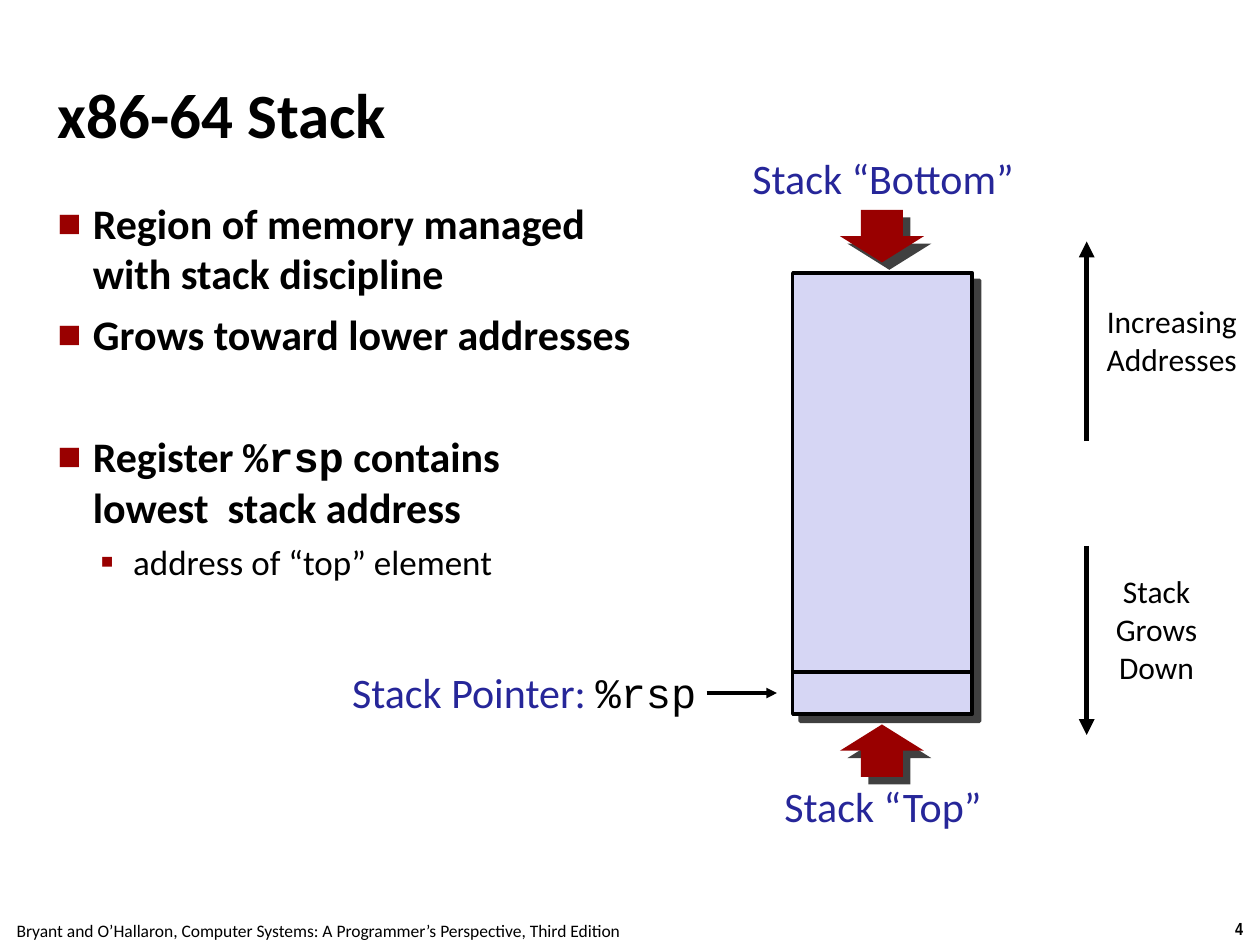
"""Builds the x86-64 stack slide on a grid of 120 columns by 90 rows."""
from lxml.etree import SubElement
from pptx import Presentation
from pptx.dml.color import RGBColor
from pptx.enum.shapes import MSO_CONNECTOR as Conn, MSO_SHAPE as Shape
from pptx.enum.text import MSO_ANCHOR as Anchor, MSO_AUTO_SIZE as Auto, PP_ALIGN as Align
from pptx.oxml.ns import qn
from pptx.util import Inches, Pt

BLACK, BLUE, RED, LILAC = "000000", "262699", "990000", "D6D6F4"
SANS, MONO = "Calibri", "Courier New"


def rgb(value):
    return RGBColor.from_string(value)


def sub(parent, tag, **attrs):
    return SubElement(parent, qn(tag), {k: str(v) for k, v in attrs.items()})


class StackSlide:
    cols, rows = 120, 90

    def __init__(self, prs):
        self.prs = prs
        self.slide = prs.slides.add_slide(prs.slide_layouts[1])
        self.shapes = self.slide.shapes

    def x(self, col):
        return round(self.prs.slide_width * col / self.cols)

    def y(self, row):
        return round(self.prs.slide_height * row / self.rows)

    def box(self, col, row, width, height):
        return self.x(col), self.y(row), self.x(width), self.y(height)

    def frame(self, sp, wrap=True, anchor=Anchor.TOP, inset=0.04):
        tf = sp.text_frame
        tf.auto_size, tf.word_wrap, tf.vertical_anchor = Auto.NONE, wrap, anchor
        tf.margin_left = tf.margin_right = tf.margin_top = tf.margin_bottom = Inches(inset)
        return tf

    def font(self, font, size=None, color=None, name=None, bold=None):
        if size:
            font.size = Pt(size)
        if color:
            font.color.rgb = rgb(color)
        if name:
            font.name = name
        if bold is not None:
            font.bold = bold

    def fill_text(self, p, parts, size, color=BLACK, name=SANS, bold=False):
        self.font(p.font, size, color, name, bold)
        for part in [parts] if isinstance(parts, str) else parts:
            text, style = (part, {}) if isinstance(part, str) else part
            for i, line in enumerate(text.split("\n")):
                if i:
                    p.add_line_break()
                r = p.add_run()
                r.text = line
                self.font(r.font, **style)

    def place(self, sp, cells):
        sp.left, sp.top, sp.width, sp.height = self.box(*cells)

    def title(self, text, cells):
        sp = self.shapes.title
        self.place(sp, cells)
        p = self.frame(sp, anchor=Anchor.MIDDLE).paragraphs[0]
        p.alignment = Align.LEFT
        self.fill_text(p, text, 36, bold=True)

    def bullets(self, items, cells):
        sp = self.slide.placeholders[1]
        self.place(sp, cells)
        tf = self.frame(sp)
        for i, (level, before, parts) in enumerate(items):
            p = tf.add_paragraph() if i else tf.paragraphs[0]
            p.level, p.space_before = level, Pt(before)
            left, hang, char, scale, size = [(0.28, 0.28, "■", 60, 24),
                                             (0.6, 0.26, "▪", 110, 20)][level]
            pPr = p._p.get_or_add_pPr()
            pPr.set("marL", str(Inches(left)))
            pPr.set("indent", str(-Inches(hang)))
            sub(sub(pPr, "a:buClr"), "a:srgbClr", val=RED)
            sub(pPr, "a:buSzPct", val=scale * 1000)
            sub(pPr, "a:buFont", typeface=SANS)
            sub(pPr, "a:buChar", char=char)
            self.fill_text(p, parts, size, bold=level == 0)

    def label(self, lines, cells, align=Align.CENTER, wrap=False, inset=0.04, **style):
        tf = self.frame(self.shapes.add_textbox(*self.box(*cells)), wrap, inset=inset)
        for i, parts in enumerate(lines):
            p = tf.add_paragraph() if i else tf.paragraphs[0]
            p.alignment = align
            self.fill_text(p, parts, **style)

    def block(self, kind, cells, fill, line=None):
        sp = self.shapes.add_shape(kind, *self.box(*cells))
        sp.fill.solid()
        sp.fill.fore_color.rgb = rgb(fill)
        if line:
            sp.line.color.rgb, sp.line.width = rgb(BLACK), Pt(line)
        else:
            sp.line.fill.background()
        sp.shadow.inherit = False
        shadow = sub(sp._element.spPr.find(qn("a:effectLst")), "a:outerShdw",
                     blurRad=0, dist=Pt(6), dir=45 * 60000, algn="ctr", rotWithShape=0)
        sub(sub(shadow, "a:srgbClr", val=BLACK), "a:alpha", val=75000)

    def line(self, start, end, width, arrow=True):
        (x1, y1), (x2, y2) = start, end
        sp = self.shapes.add_connector(Conn.STRAIGHT, self.x(x1), self.y(y1),
                                       self.x(x2), self.y(y2))
        sp.line.color.rgb, sp.line.width = rgb(BLACK), Pt(width)
        if arrow:
            sub(sp._element.spPr.find(qn("a:ln")), "a:tailEnd", type="triangle")
        sub(sp._element.spPr, "a:effectLst")


def main():
    prs = Presentation()
    prs.slide_width, prs.slide_height = Inches(10), Inches(7.5)
    s = StackSlide(prs)
    s.title("x86-64 Stack", (5, 3.33, 110, 15))
    s.bullets([
        (0, 6, "Region of memory managed with stack discipline"),
        (0, 6, "Grows toward lower addresses"),
        (0, 41, ["Register ", ("%rsp", {"name": MONO}), " contains \nlowest  stack address"]),
        (1, 5, "address of “top” element"),
    ], (5, 18.33, 58.5, 71.25))

    s.block(Shape.RECTANGLE, (75.5, 26, 17.1, 42), LILAC, line=2)
    s.line((75.5, 64), (92.6, 64), 2, arrow=False)
    s.block(Shape.DOWN_ARROW, (80, 20, 8, 5), RED)
    s.block(Shape.UP_ARROW, (80, 69, 8, 5), RED)
    s.label(["Stack “Bottom”"], (70.7, 14, 26.8, 6), size=24, color=BLUE)
    s.label(["Stack “Top”"], (73.9, 73.9, 20.4, 6), size=24, color=BLUE)

    pointer = ["Stack Pointer: ", ("%rsp", {"name": MONO, "color": BLACK})]
    s.label([pointer], (32.3, 63, 34.5, 6), align=Align.RIGHT, size=24, color=BLUE)
    s.line((67.3, 66), (74, 66), 2)

    s.line((103.5, 42), (103.5, 23), 3)
    s.label(["Increasing", "Addresses"], (104.8, 28.3, 13.6, 8.3), size=18)
    s.line((103.5, 52), (103.5, 70), 3)
    s.label(["Stack Grows", "Down"], (104.8, 54, 10.7, 12), wrap=True, size=18)

    s.label(["Bryant and O’Hallaron, Computer Systems: A Programmer’s Perspective, Third Edition"],
            (-0.2, 87, 61, 3.2), inset=0.05, size=10)
    s.label(["4"], (116, 86.8, 4, 3.2), inset=0.05, size=10, name="Arial Narrow", bold=True)
    prs.save("out.pptx")


if __name__ == "__main__":
    main()
